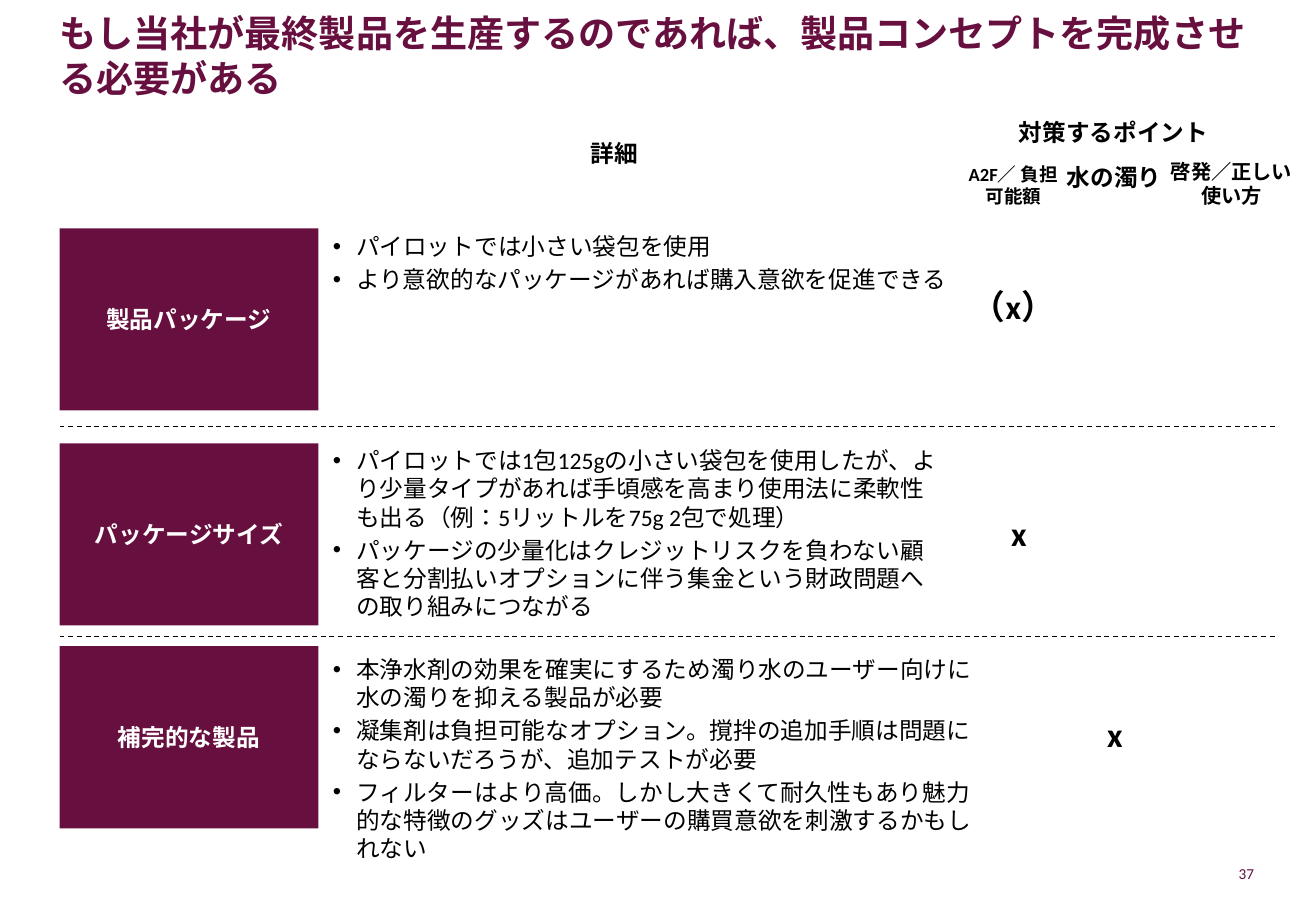
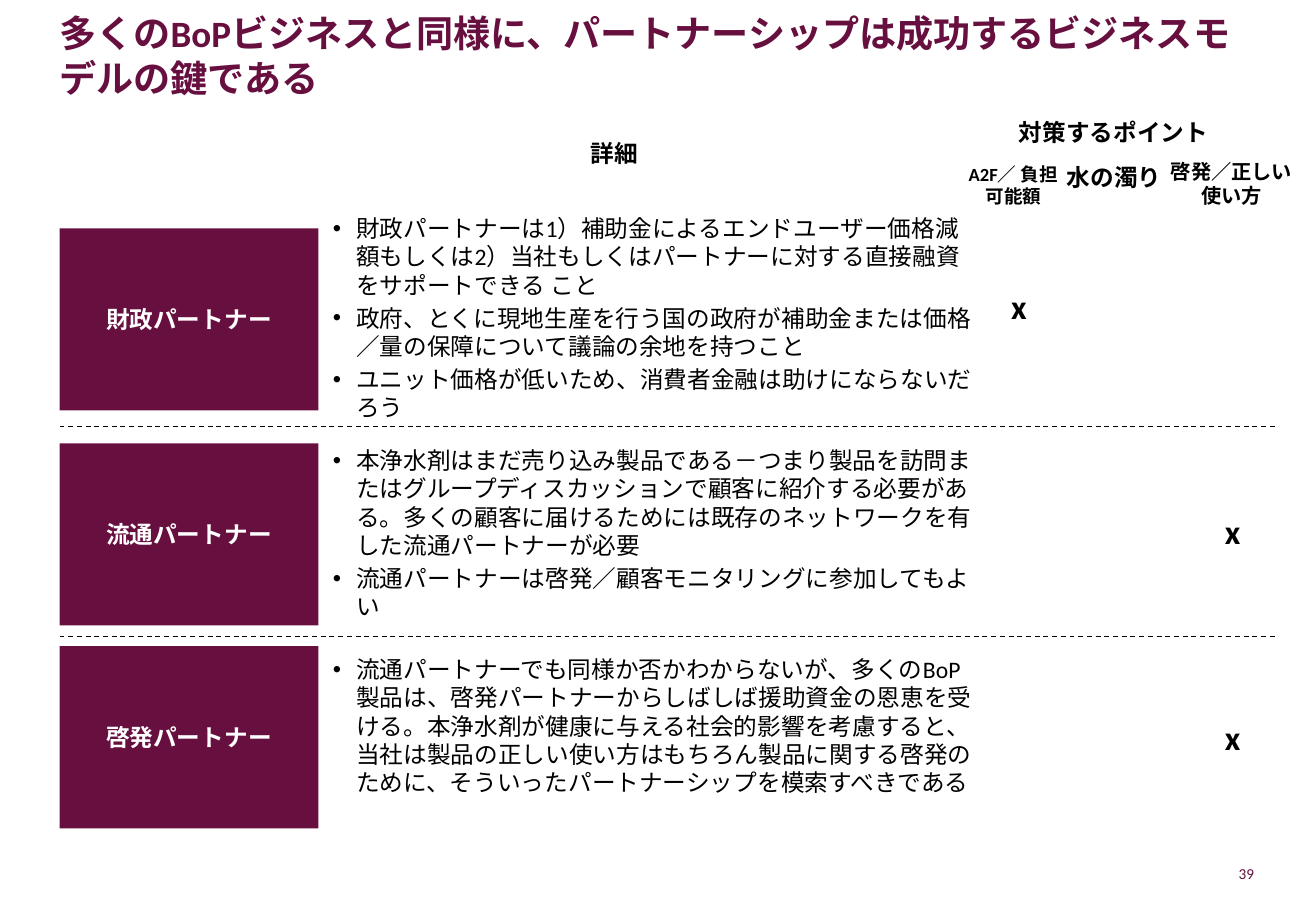
import dataclasses
import typing

import lxml.etree
import pptx
import pptx.dml.color
import pptx.enum.dml
import pptx.enum.lang
import pptx.enum.shapes
import pptx.enum.text
import pptx.oxml.ns
import pptx.util

Inches = pptx.util.Inches
Pt = pptx.util.Pt
qn = pptx.oxml.ns.qn
ALIGN = pptx.enum.text.PP_ALIGN
ANCHOR = pptx.enum.text.MSO_ANCHOR

FONT = "Calibri"
WINE = "67103F"
BLACK = "000000"
WHITE = "FFFFFF"
LEFT = 0.49
RULES = (5.24, 3.51)
TOPS = (1.88, 3.65, 5.32)


@dataclasses.dataclass
class Box:
    left: float
    top: float
    width: float
    height: float

    def place(self) -> tuple:
        return tuple(map(Inches, (self.left, self.top, self.width, self.height)))


@dataclasses.dataclass
class Head:
    text: str
    box: Box
    size: int = 14


@dataclasses.dataclass
class Row:
    label: str
    points: list[str]
    mark: Box
    top: float
    width: float = 5.32
    sign: str = "x"


@dataclasses.dataclass
class Page:
    title: str
    number: str
    rows: list[Row]


HEADS = [
    Head("対策するポイント", Box(7.81, 0.97, 2.71, 0.25)),
    Head("A2F／ 負担可能額", Box(7.91, 1.34, 0.86, 0.37), 11),
    Head("水の濁り", Box(8.74, 1.34, 0.86, 0.18)),
    Head("啓発／正しい使い方", Box(9.63, 1.31, 1.01, 0.4), 12),
    Head("詳細", Box(3.7, 1.14, 2.71, 0.25)),
]

PAGES = [
    Page("もし当社が最終製品を生産するのであれば、製品コンセプトを完成させる必要がある", "37", [
        Row("製品パッケージ", [
            "パイロットでは小さい袋包を使用",
            "より意欲的なパッケージがあれば購入意欲を促進できる",
        ], Box(7.91, 2.27, 0.86, 0.5), 1.91, 5.17, "（x）"),
        Row("パッケージサイズ", [
            "パイロットでは1包125gの小さい袋包を使用したが、より少量タイプがあれば手頃感を高まり使用法に柔軟性も出る（例：5リットルを75g 2包で処理）",
            "パッケージの少量化はクレジットリスクを負わない顧客と分割払いオプションに伴う集金という財政問題への取り組みにつながる",
        ], Box(8.2, 4.14, 0.37, 0.5), 3.67, 4.98),
        Row("補完的な製品", [
            "本浄水剤の効果を確実にするため濁り水のユーザー向けに水の濁りを抑える製品が必要",
            "凝集剤は負担可能なオプション。撹拌の追加手順は問題にならないだろうが、追加テストが必要",
            "フィルターはより高価。しかし大きくて耐久性もあり魅力的な特徴のグッズはユーザーの購買意欲を刺激するかもしれない",
        ], Box(8.99, 5.79, 0.37, 0.5), 5.39),
    ]),
    Page("多くのBoPビジネスと同様に、パートナーシップは成功するビジネスモデルの鍵である", "39", [
        Row("財政パートナー", [
            "財政パートナーは1）補助金によるエンドユーザー価格減額もしくは2）当社もしくはパートナーに対する直接融資をサポートできる こと",
            "政府、とくに現地生産を行う国の政府が補助金または価格／量の保障について議論の余地を持つこと",
            "ユニット価格が低いため、消費者金融は助けにならないだろう",
        ], Box(8.2, 2.27, 0.37, 0.5), 1.76),
        Row("流通パートナー", [
            "本浄水剤はまだ売り込み製品である－つまり製品を訪問またはグループディスカッションで顧客に紹介する必要がある。多くの顧客に届けるためには既存のネットワークを有した流通パートナーが必要",
            "流通パートナーは啓発／顧客モニタリングに参加してもよい",
        ], Box(9.96, 4.12, 0.37, 0.5), 3.67),
        Row("啓発パートナー", [
            "流通パートナーでも同様か否かわからないが、多くのBoP製品は、啓発パートナーからしばしば援助資金の恩恵を受ける。本浄水剤が健康に与える社会的影響を考慮すると、当社は製品の正しい使い方はもちろん製品に関する啓発のために、そういったパートナーシップを模索すべきである",
        ], Box(9.96, 5.82, 0.37, 0.5), 5.39),
    ]),
]


def paint(form: typing.Any, tone: str) -> None:
    form.rgb = pptx.dml.color.RGBColor.from_string(tone)


def dot(para: typing.Any) -> None:
    props = para._p.get_or_add_pPr()
    props.set("marL", str(Inches(0.19)))
    props.set("indent", str(-Inches(0.19)))
    lxml.etree.SubElement(props, qn("a:buFont")).set("typeface", "Arial")
    lxml.etree.SubElement(props, qn("a:buChar")).set("char", "•")


def write(shape: typing.Any, *texts: str, size: int = 14, tone: str = BLACK,
          bold: bool = True, align: typing.Any = ALIGN.CENTER,
          anchor: typing.Any = ANCHOR.TOP, list_: bool = False) -> None:
    frame = shape.text_frame
    frame.word_wrap = True
    frame.auto_size = pptx.enum.text.MSO_AUTO_SIZE.NONE
    frame.vertical_anchor = anchor
    frame.margin_left = frame.margin_right = 0
    frame.margin_top = frame.margin_bottom = 0
    for order, text in enumerate(texts):
        para = frame.add_paragraph() if order else frame.paragraphs[0]
        if list_:
            dot(para)
        para.alignment = align
        para.space_before = Pt(0.2 * size if order else 0)
        run = para.add_run()
        run.text = text
        font = run.font
        font.size, font.bold, font.name = Pt(size), bold, FONT
        font.language_id = pptx.enum.lang.MSO_LANGUAGE_ID.JAPANESE
        paint(font.color, tone)
        props = run._r.get_or_add_rPr()
        lxml.etree.SubElement(props, qn("a:ea")).set("typeface", FONT)


def add_text(slide: typing.Any, box: Box, *texts: str, **style: typing.Any) -> None:
    write(slide.shapes.add_textbox(*box.place()), *texts, **style)


def add_label(slide: typing.Any, text: str, top: float) -> None:
    kind = pptx.enum.shapes.MSO_SHAPE.RECTANGLE
    shape = slide.shapes.add_shape(kind, *Box(LEFT, top, 2.13, 1.5).place())
    shape.shadow.inherit = False
    shape.fill.solid()
    paint(shape.fill.fore_color, WINE)
    shape.line.fill.background()
    write(shape, text, tone=WHITE, anchor=ANCHOR.MIDDLE)


def add_rule(slide: typing.Any, top: float) -> None:
    kind = pptx.enum.shapes.MSO_CONNECTOR.STRAIGHT
    rule = slide.shapes.add_connector(
        kind, Inches(LEFT), Inches(top), Inches(10.49), Inches(top))
    paint(rule.line.color, BLACK)
    rule.line.width = Pt(0.75)
    rule.line.dash_style = pptx.enum.dml.MSO_LINE.DASH
    lxml.etree.SubElement(rule._element.spPr, qn("a:effectLst"))


def add_page(deck: typing.Any, page: Page) -> None:
    slide = deck.slides.add_slide(deck.slide_layouts[5])
    title = slide.shapes.title
    title.left, title.top, title.width, title.height = Box(LEFT, 0.15, 9.85, 0.67).place()
    write(title, page.title, size=22, tone=WINE, align=ALIGN.LEFT, anchor=ANCHOR.BOTTOM)
    for row, top in zip(page.rows, TOPS):
        add_label(slide, row.label, top)
        add_text(slide, Box(2.74, row.top, row.width, 1.5), *row.points,
                 bold=False, align=ALIGN.LEFT, list_=True)
        add_text(slide, row.mark, row.sign, size=20, anchor=ANCHOR.MIDDLE)
    for top in RULES:
        add_rule(slide, top)
    for head in HEADS:
        add_text(slide, head.box, head.text, size=head.size)
    add_text(slide, Box(9.53, 7.03, 0.79, 0.32), page.number, size=9, tone=WINE,
             bold=False, align=ALIGN.RIGHT, anchor=ANCHOR.MIDDLE)


def main() -> None:
    deck = pptx.Presentation()
    deck.slide_width, deck.slide_height = Inches(10.83), Inches(7.5)
    for page in PAGES:
        add_page(deck, page)
    deck.save("out.pptx")


if __name__ == "__main__":
    main()
